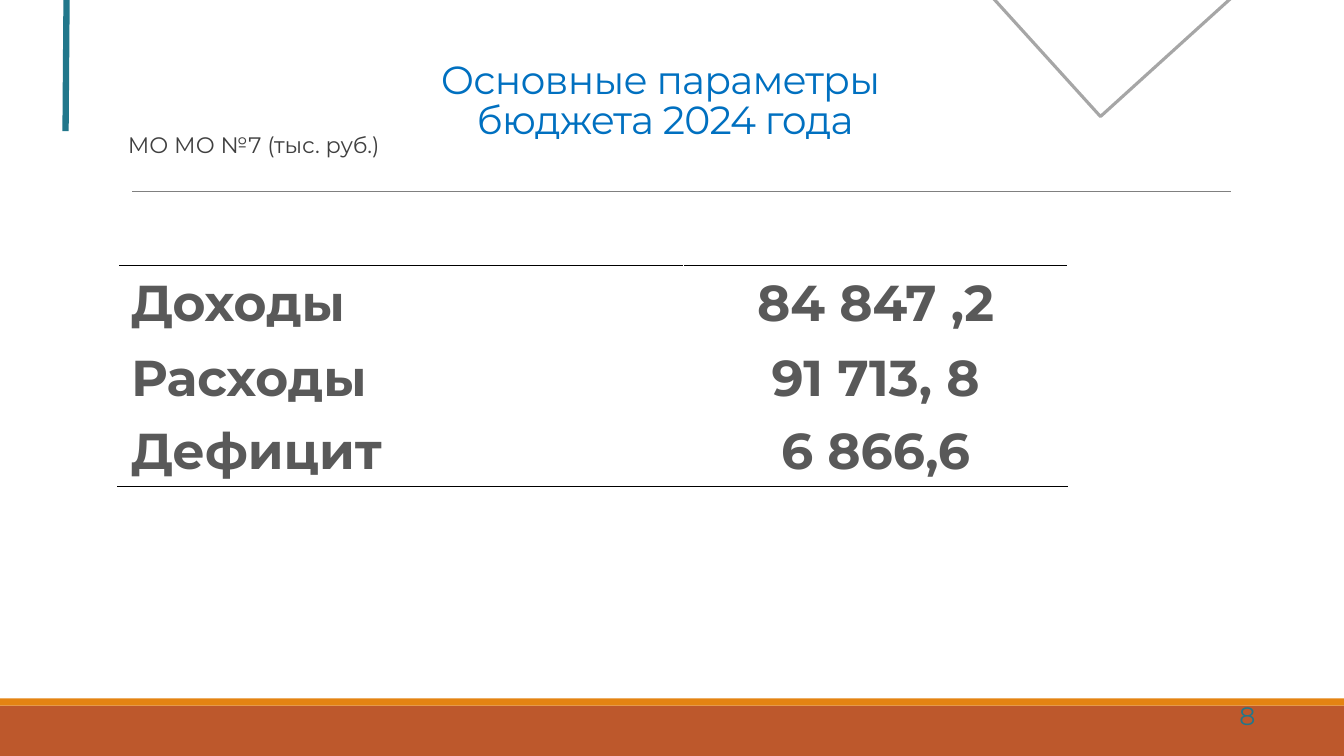
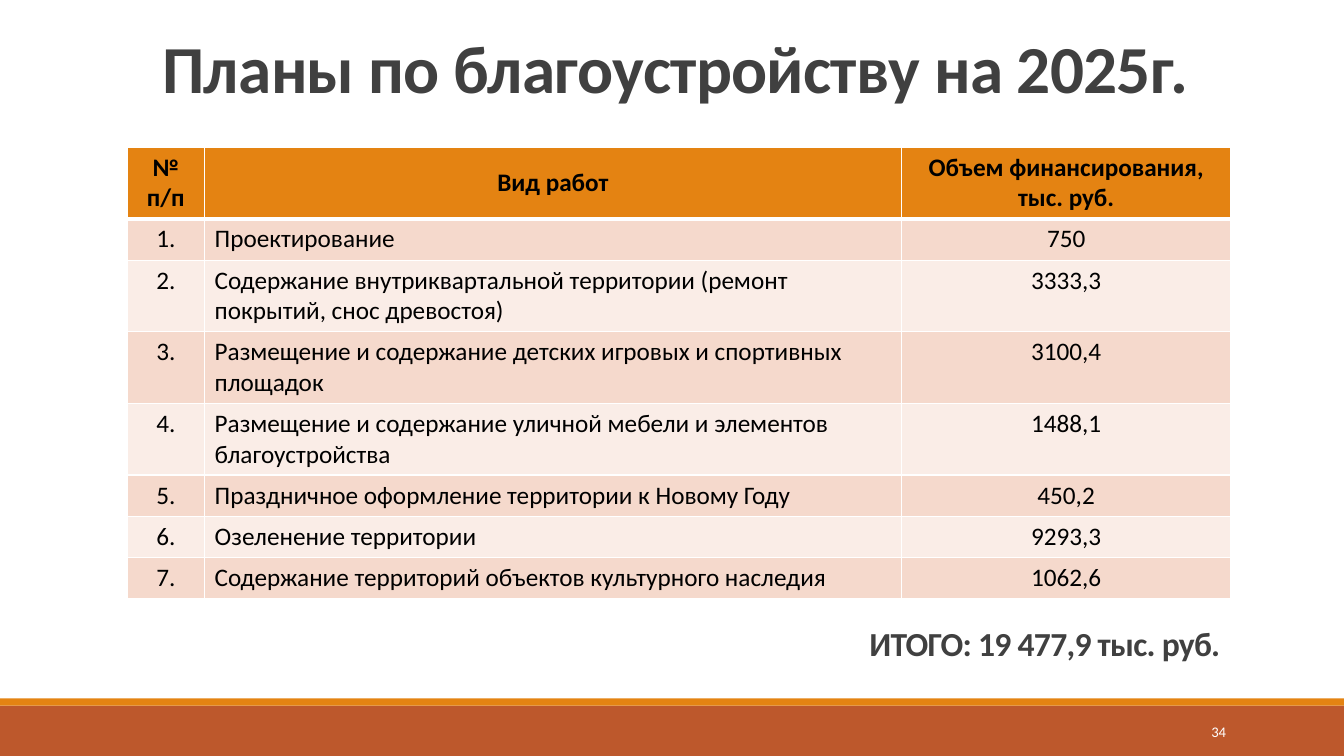
"""Build two budget slides that share one footer band and title style."""
from lxml import etree
from pptx import Presentation
from pptx.dml.color import RGBColor
from pptx.enum.shapes import MSO_CONNECTOR, MSO_SHAPE
from pptx.enum.text import MSO_ANCHOR, MSO_AUTO_SIZE, PP_ALIGN
from pptx.oxml.ns import qn
from pptx.util import Inches, Pt

LEFT, CENTER, RIGHT = PP_ALIGN.LEFT, PP_ALIGN.CENTER, PP_ALIGN.RIGHT
TOP, MIDDLE, BOTTOM = MSO_ANCHOR.TOP, MSO_ANCHOR.MIDDLE, MSO_ANCHOR.BOTTOM
RECTANGLE, STRAIGHT = MSO_SHAPE.RECTANGLE, MSO_CONNECTOR.STRAIGHT

WIDTH, HEIGHT = 13.33, 7.5
RUST, ORANGE, TEAL, DARK = "BD582C", "E48312", "21778B", "404040"
WHITE, BLACK = "FFFFFF", "000000"
BANDS = ("F5D9CC", "FAEDE7")
TITLE_FORMAT = {"align": CENTER, "spacing": 0.85, "track": -50}

BUDGET = [
    ("Доходы", "84 847 ,2"),
    ("Расходы", "91 713, 8"),
    ("Дефицит", "6 866,6"),
]
BUDGET_COLUMNS = (5.61, 3.81)
BUDGET_ROWS = (0.76, 0.73, 0.67)

WORKS_HEADER = ("№\nп/п", "Вид работ", "Объем финансирования,\nтыс. руб.")
WORKS = [
    ("Проектирование", "750"),
    ("Содержание внутриквартальной территории (ремонт покрытий, снос древостоя)", "3333,3"),
    ("Размещение и содержание детских игровых и спортивных площадок", "3100,4"),
    ("Размещение и содержание уличной мебели и элементов благоустройства", "1488,1"),
    ("Праздничное оформление территории к Новому Году", "450,2"),
    ("Озеленение территории", "9293,3"),
    ("Содержание территорий объектов культурного наследия", "1062,6"),
]
WORKS_COLUMNS = (0.77, 6.91, 3.27)
ONE_LINE, TWO_LINES, LINE_LETTERS = 0.41, 0.71, 55


def color(value):
    return RGBColor.from_string(value)


def inches(values):
    return [Inches(value) for value in values]


def write(frame, text, size, font, ink, bold=False, align=LEFT, spacing=None, track=None):
    """Put one formatted paragraph into a text frame."""
    para = frame.paragraphs[0]
    para.text = text
    para.alignment = align
    if spacing:
        para.line_spacing = spacing
    looks = {"size": Pt(size), "name": font, "bold": bold}
    for span in para.runs:
        for name, value in looks.items():
            setattr(span.font, name, value)
        span.font.color.rgb = color(ink)
        if track:
            span.font._element.set("spc", str(track))
    return para


def set_frame(frame, anchor):
    """Make a text frame wrap at a fixed size."""
    settings = {"word_wrap": True, "auto_size": MSO_AUTO_SIZE.NONE, "vertical_anchor": anchor}
    for name, value in settings.items():
        setattr(frame, name, value)


def add_title(page, area, text, **looks):
    """Place and format the title placeholder."""
    title = page.shapes.title
    title.left, title.top, title.width, title.height = inches(area)
    set_frame(title.text_frame, BOTTOM)
    write(title.text_frame, text, **TITLE_FORMAT, **looks)


def add_text(page, area, text, anchor=MIDDLE, **looks):
    """Add a text box with one paragraph."""
    box = page.shapes.add_textbox(*inches(area))
    set_frame(box.text_frame, anchor)
    write(box.text_frame, text, **looks)


def add_rectangle(page, area, fill=None, line=None, weight=1, rotation=0):
    """Add a plain rectangle, filled or outlined."""
    shape = page.shapes.add_shape(RECTANGLE, *inches(area))
    shape.shadow.inherit = False
    shape.rotation = rotation
    if fill:
        shape.fill.solid()
        shape.fill.fore_color.rgb = color(fill)
    else:
        shape.fill.background()
    if line:
        shape.line.color.rgb = color(line)
        shape.line.width = Pt(weight)
    else:
        shape.line.fill.background()
    return shape


def add_line(page, ends, ink, weight):
    """Add a straight line without a shadow."""
    line = page.shapes.add_connector(STRAIGHT, *inches(ends))
    line.line.color.rgb = color(ink)
    line.line.width = Pt(weight)
    etree.SubElement(line.element.spPr, qn("a:effectLst"))
    return line


def add_table(page, corner, columns, rows):
    """Add an unbanded table with the given column widths and row heights."""
    area = (*corner, sum(columns), sum(rows))
    table = page.shapes.add_table(len(rows), len(columns), *inches(area)).table
    table.first_row = table.horz_banding = False
    for column, width in zip(table.columns, columns):
        column.width = Inches(width)
    for row, height in zip(table.rows, rows):
        row.height = Inches(height)
    return table


def set_borders(cell, ink, weights):
    """Draw cell borders from a dict of side letter to weight, in L, R, T, B order."""
    properties = cell._tc.get_or_add_tcPr()
    for position, (side, weight) in enumerate(weights.items()):
        line = etree.Element(qn(f"a:ln{side}"), w=str(Pt(weight)))
        fill = etree.SubElement(line, qn("a:solidFill"))
        etree.SubElement(fill, qn("a:srgbClr"), val=ink)
        properties.insert(position, line)


def add_master_parts(deck, page):
    """Draw the footer bands and the title rule, and move them to the master."""
    parts = [
        add_rectangle(page, (0, 7, WIDTH, 0.5), RUST),
        add_rectangle(page, (0, 6.93, WIDTH, 0.07), ORANGE),
        add_line(page, (1.31, 1.9, 12.21, 1.9), "808080", 0.5),
    ]
    tree = deck.slide_master.shapes.element
    for position, part in enumerate(parts, start=2):
        tree.insert(position, part.element)


def fill_budget(page):
    """Build the slide with the main budget figures."""
    add_title(page, (1.14, 0.36, 10.82, 1.1), "Основные параметры\n бюджета 2024 года",
              size=28, font="Montserrat", ink="0070C0")
    table = add_table(page, (1.17, 2.63), BUDGET_COLUMNS, BUDGET_ROWS)
    edges = {0: {"T": 1}, len(BUDGET) - 1: {"B": 1}}
    hanging = Inches(0.38)
    for row, texts in enumerate(BUDGET):
        for column, text in enumerate(texts):
            cell = table.cell(row, column)
            cell.fill.background()
            cell.vertical_anchor = MIDDLE
            cell.margin_left = cell.margin_right = Inches(0.13)
            para = write(cell.text_frame, text, 36, "Montserrat", "595959", True,
                         (LEFT, CENTER)[column])
            indents = para._p.get_or_add_pPr()
            indents.set("marL", str(hanging))
            indents.set("indent", str(-hanging))
            set_borders(cell, BLACK, edges.get(row, {}))
    add_text(page, (1.17, 0.9, 10.82, 1.1), "МО МО №7 (тыс. руб.)",
             size=16, font="Montserrat", ink=DARK, spacing=0.9)
    add_line(page, (0.66, 0, 0.65, 1.3), TEAL, 4.5)
    add_rectangle(page, (10.11, -1.27, 1.88, 2.07), line="A6A6A6", weight=2.25, rotation=47.8)
    add_text(page, (9.55, 6.9, 3, 0.4), "8",
             size=18, font="Montserrat", ink=TEAL, align=RIGHT)


def fill_works(page):
    """Build the slide with the planned works and their total."""
    looks = {"font": "Calibri", "ink": DARK, "bold": True}
    add_title(page, (1.2, 0.31, 11, 0.8), "Планы по благоустройству на 2025г.", size=48, **looks)
    rows = [WORKS_HEADER] + [(f"{number}.", *work) for number, work in enumerate(WORKS, start=1)]
    heights = [TWO_LINES] + [TWO_LINES if len(work) > LINE_LETTERS else ONE_LINE
                             for work, _ in WORKS]
    table = add_table(page, (1.26, 1.46), WORKS_COLUMNS, heights)
    table.first_row = True
    for row, texts in enumerate(rows):
        header = row == 0
        for column, text in enumerate(texts):
            cell = table.cell(row, column)
            cell.fill.solid()
            cell.fill.fore_color.rgb = color(ORANGE if header else BANDS[(row - 1) % 2])
            cell.vertical_anchor = MIDDLE if header else TOP
            align = LEFT if column == 1 and not header else CENTER
            write(cell.text_frame, text, 18, "Calibri", BLACK, header, align)
            set_borders(cell, WHITE, {"L": 1, "R": 1, "T": 3 if row == 1 else 1,
                                      "B": 3 if header else 1})
    add_text(page, (10.83, 7.06, 1.43, 0.4), "34",
             size=10.5, font="Calibri", ink=WHITE, align=RIGHT)
    add_text(page, (1.2, 5.83, 11, 0.8), "ИТОГО: 19 477,9 тыс. руб.", BOTTOM,
             size=24, **{**TITLE_FORMAT, **looks, "align": RIGHT})


def main():
    """Assemble and save the deck."""
    deck = Presentation()
    deck.slide_width, deck.slide_height = inches((WIDTH, HEIGHT))
    layout = deck.slide_layouts.get_by_name("Title Only")
    budget_page, works_page = [deck.slides.add_slide(layout) for _ in range(2)]
    add_master_parts(deck, budget_page)
    fill_budget(budget_page)
    fill_works(works_page)
    deck.save("out.pptx")


if __name__ == "__main__":
    main()
